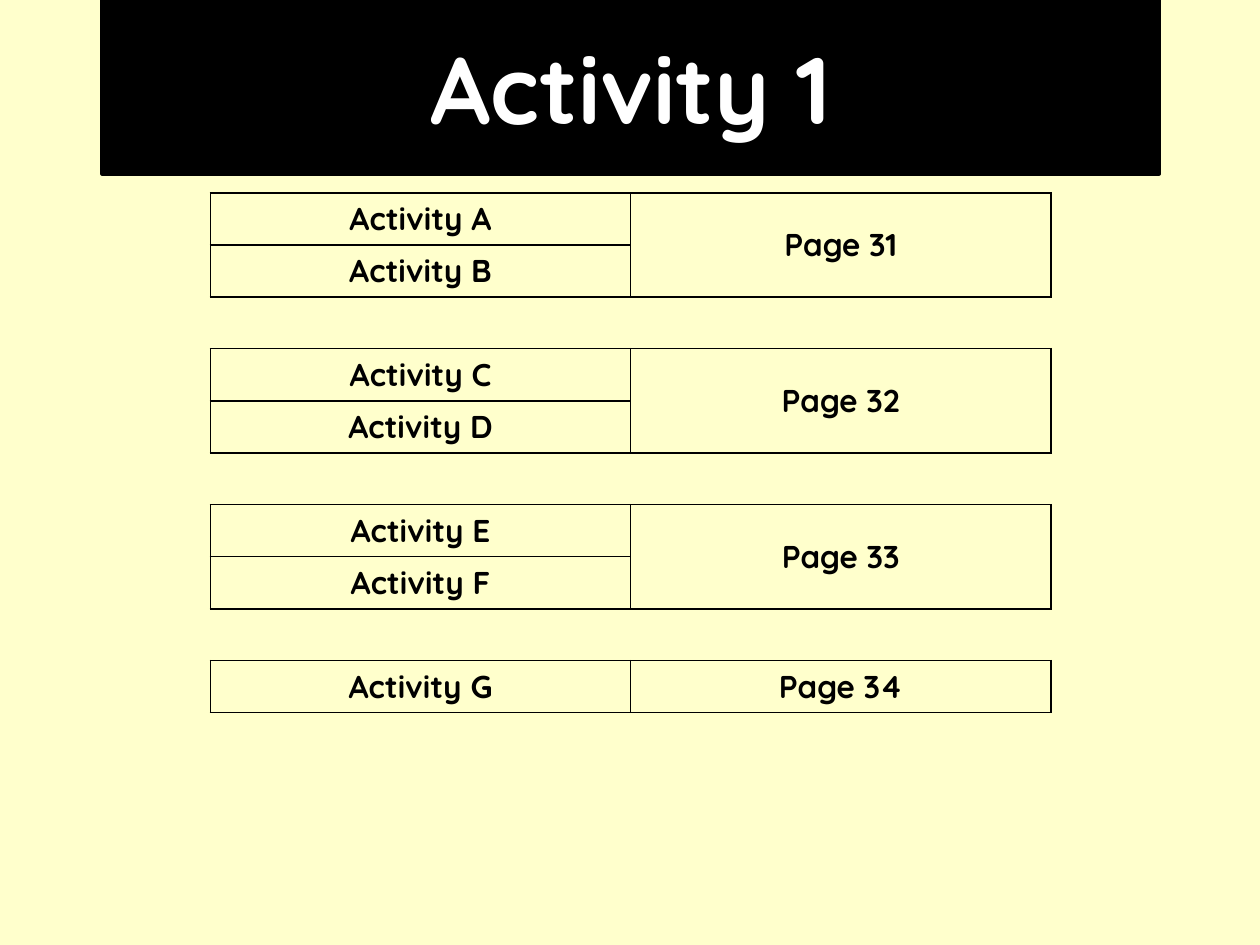
import pptx
import pptx.util
import pptx.dml.color
import pptx.enum.text
import pptx.oxml
import pptx.oxml.ns

Inches = pptx.util.Inches
Pt = pptx.util.Pt
ANCHOR = pptx.enum.text.MSO_ANCHOR

TITLE = "Activity 1"
GROUPS = [
    (["Activity A", "Activity B"], "Page 31"),
    (["Activity C", "Activity D"], "Page 32"),
    (["Activity E", "Activity F"], "Page 33"),
    (["Activity G"], "Page 34"),
]
FONT = "Quicksand"
CREAM, BLACK, WHITE = "FFFFCC", "000000", "FFFFFF"
WIDTH, ROW = 6.67, 0.41


def paint(color, value):
    color.rgb = pptx.dml.color.RGBColor.from_string(value)


def fill(item, value):
    item.fill.solid()
    paint(item.fill.fore_color, value)


def write(frame, text, size=18, color=BLACK):
    para = frame.paragraphs[0]
    para.alignment = pptx.enum.text.PP_ALIGN.CENTER
    run = para.add_run()
    run.text = text
    run.font.name = FONT
    run.font.size = Pt(size)
    run.font.bold = True
    paint(run.font.color, color)


def border(cell, drawn):
    props = cell._tc.get_or_add_tcPr()
    for side in "LRTB":
        ink = (f'<a:solidFill><a:srgbClr val="{BLACK}"/></a:solidFill>'
               if side in drawn else "<a:noFill/>")
        props.append(pptx.oxml.parse_xml(
            f'<a:ln{side} {pptx.oxml.ns.nsdecls("a")} w="{Pt(1)}">{ink}</a:ln{side}>'))
    cell.fill.background()


def head(slide):
    title = slide.shapes.title
    title.left, title.top = Inches(0.81), Inches(0)
    title.width, title.height = Inches(8.39), Inches(1.38)
    fill(title, BLACK)
    paint(title.line.color, BLACK)
    title.line.width = Pt(2)
    frame = title.text_frame
    frame.auto_size = pptx.enum.text.MSO_AUTO_SIZE.NONE
    frame.vertical_anchor = ANCHOR.MIDDLE
    write(frame, TITLE, size=54, color=WHITE)


def grid(slide):
    count = sum(len(names) for names, page in GROUPS) + len(GROUPS) - 1
    table = slide.shapes.add_table(
        count, 2, Inches(1.67), Inches(1.53),
        Inches(WIDTH), Inches(ROW * count)).table
    table.first_row = table.horz_banding = False
    for col in table.columns:
        col.width = Inches(WIDTH / 2)
    for row in table.rows:
        row.height = Inches(ROW)

    top = 0
    for names, page in GROUPS:
        if top:
            for col in range(2):
                border(table.cell(top, col), "TB")
            table.cell(top, 0).merge(table.cell(top, 1))
            top += 1
        for row, name in enumerate(names, top):
            for col in range(2):
                border(table.cell(row, col), "LRTB")
            write(table.cell(row, 0).text_frame, name)
        cell = table.cell(top, 1)
        if len(names) > 1:
            cell.merge(table.cell(top + len(names) - 1, 1))
        cell.vertical_anchor = ANCHOR.MIDDLE
        write(cell.text_frame, page)
        top += len(names)


def main():
    deck = pptx.Presentation()
    deck.slide_width, deck.slide_height = Inches(10), Inches(7.5)
    slide = deck.slides.add_slide(deck.slide_layouts[5])
    fill(slide.background, CREAM)
    head(slide)
    grid(slide)
    deck.save("out.pptx")


if __name__ == "__main__":
    main()
